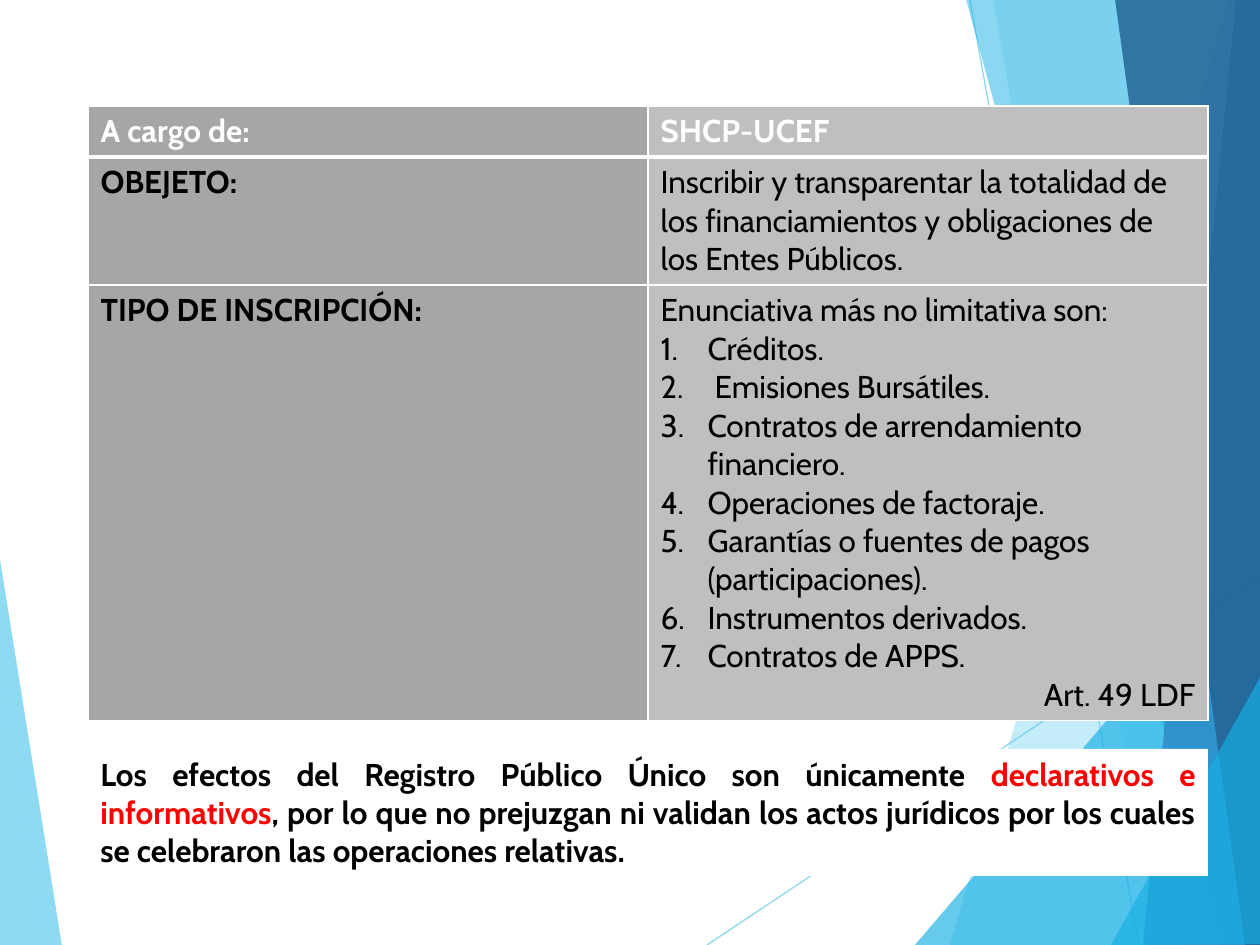
from dataclasses import dataclass

from pptx import Presentation
from pptx import util as u
from pptx.dml.color import RGBColor
from pptx.enum import shapes, text
from pptx.oxml import parse_xml
from pptx.oxml.ns import nsdecls, qn
from pptx.oxml.xmlchemy import OxmlElement

SCALE = u.Inches(1) / 126
WIDTH, HEIGHT = 1260, 945
BLANK_LAYOUT = 6


@dataclass(frozen=True)
class Theme:
    font: str = "Cabin"
    size: int = 18
    white: str = "FFFFFF"
    black: str = "000000"
    red: str = "FF0000"
    label_fill: str = "A6A6A6"
    value_fill: str = "BFBFBF"
    sky: str = "5FCBEF"
    cyan: str = "17B0E4"
    blue: str = "2E83C3"
    navy: str = "226292"


THEME = Theme()

# Facets of the background: colour, opacity in percent, corners in px
LEFT_FACET = (THEME.sky, 70, [(-1, 553), (62, 946), (-1, 945)])
RIGHT_FACETS = [
    (THEME.sky, 36, [(1229, 0), (950, 945), (1262, 946), (1261, 1)]),
    (THEME.sky, 20, [(993, -1), (1158, 945), (1261, 945), (1261, -1)]),
    (THEME.cyan, 66, [(915, 945), (1260, 541), (1261, 945)]),
    (THEME.cyan, 50, [(966, -1), (1222, 945), (1261, 944), (1261, -1)]),
    (THEME.blue, 70, [(1236, -1), (1143, 945), (1261, 945), (1260, -1)]),
    (THEME.navy, 82, [(1115, -1), (1245, 945), (1262, 945), (1260, -1)]),
    (THEME.cyan, 66, [(1111, 945), (1262, 674), (1262, 944)]),
]
RAYS = [((707, 945), (1261, 576)), ((970, 0), (1139, 945))]

REGISTRATION_TYPES = [
    "Créditos.",
    " Emisiones Bursátiles.",
    "Contratos de arrendamiento financiero.",
    "Operaciones de factoraje.",
    "Garantías o fuentes de pagos (participaciones).",
    "Instrumentos derivados.",
    "Contratos de APPS.",
]


def px(length):
    return u.Emu(round(length * SCALE))


def set_fill(fill, color, opacity=100):
    fill.solid()
    fill.fore_color.rgb = RGBColor.from_string(color)
    if opacity < 100:
        color_element = fill._xPr.find(qn("a:solidFill"))[0]
        alpha = OxmlElement("a:alpha")
        alpha.set("val", str(opacity * 1000))
        color_element.append(alpha)


def add_text(paragraph, content, color=THEME.black, bold=False, align=None, numbered=False):
    run = paragraph.add_run()
    run.text = content
    run.font.name = THEME.font
    run.font.size = u.Pt(THEME.size)
    run.font.bold = bold
    run.font.color.rgb = RGBColor.from_string(color)
    if align is not None:
        paragraph.alignment = align
    if numbered:
        properties = paragraph._p.get_or_add_pPr()
        properties.set("marL", str(px(47)))
        properties.set("indent", str(-px(47)))
        number = OxmlElement("a:buAutoNum")
        number.set("type", "arabicPeriod")
        properties.append(number)


def add_facet(slide, color, opacity, corners):
    builder = slide.shapes.build_freeform(*corners[0], scale=SCALE)
    builder.add_line_segments(corners[1:], close=True)
    shape = builder.convert_to_shape()
    shape.shadow.inherit = False
    set_fill(shape.fill, color, opacity)
    shape.line.fill.background()


def add_ray(slide, start, end):
    connector = slide.shapes.add_connector(
        shapes.MSO_CONNECTOR.STRAIGHT, *map(px, start + end))
    connector.line.width = u.Pt(0.75)
    set_fill(connector.line.fill, THEME.sky, 70)
    connector._element.spPr.append(OxmlElement("a:effectLst"))


def add_background(slide):
    add_facet(slide, *LEFT_FACET)
    for start, end in RAYS:
        add_ray(slide, start, end)
    for facet in RIGHT_FACETS:
        add_facet(slide, *facet)


def set_borders(cell, **points):
    properties = cell._tc.get_or_add_tcPr()
    for side in "LRTB":
        width = u.Pt(points.get(side, 1))
        properties.append(parse_xml(
            f'<a:ln{side} {nsdecls("a")} w="{width}"><a:solidFill>'
            f'<a:srgbClr val="{THEME.white}"/></a:solidFill></a:ln{side}>'))


def add_registry_table(slide):
    row_heights = [51, 127, 428]
    table = slide.shapes.add_table(
        3, 2, px(88), px(106), px(1120), px(sum(row_heights))).table
    for row, height in zip(table.rows, row_heights):
        row.height = px(height)

    # Cell borders and fills
    for index, row in enumerate(table.rows):
        for cell, color in zip(row.cells, (THEME.label_fill, THEME.value_fill)):
            set_borders(cell, T=3 if index == 1 else 1, B=3 if index == 0 else 1)
            set_fill(cell.fill, color)

    # Labels and opening lines
    rows = [
        ("A cargo de:", "SHCP-UCEF"),
        ("OBEJETO:", "Inscribir y transparentar la totalidad de los financiamientos "
                     "y obligaciones de los Entes Públicos."),
        ("TIPO DE INSCRIPCIÓN:", "Enunciativa más no limitativa son:"),
    ]
    for index, (label, value) in enumerate(rows):
        header = index == 0
        color = THEME.white if header else THEME.black
        for column, content in enumerate((label, value)):
            paragraph = table.cell(index, column).text_frame.paragraphs[0]
            add_text(paragraph, content, color=color, bold=header or column == 0)

    # Numbered list and its legal reference
    frame = table.cell(2, 1).text_frame
    for item in REGISTRATION_TYPES:
        add_text(frame.add_paragraph(), item, numbered=True)
    add_text(frame.add_paragraph(), "Art. 49 LDF", align=text.PP_ALIGN.RIGHT)


def add_effects_note(slide):
    shape = slide.shapes.add_shape(
        shapes.MSO_SHAPE.RECTANGLE, px(88), px(749), px(1120), px(127))
    shape.shadow.inherit = False
    set_fill(shape.fill, THEME.white)
    shape.line.fill.background()
    frame = shape.text_frame
    frame.word_wrap = True
    frame.auto_size = text.MSO_AUTO_SIZE.SHAPE_TO_FIT_TEXT
    frame.vertical_anchor = text.MSO_ANCHOR.TOP
    for content, color in [
        ("Los efectos del Registro Público Único son únicamente ", THEME.black),
        ("declarativos e informativos", THEME.red),
        (", por lo que no prejuzgan ni validan los actos jurídicos por los cuales "
         "se celebraron las operaciones relativas.", THEME.black),
    ]:
        add_text(frame.paragraphs[0], content, color=color, bold=True,
                 align=text.PP_ALIGN.JUSTIFY)


def main():
    presentation = Presentation()
    presentation.slide_width, presentation.slide_height = px(WIDTH), px(HEIGHT)
    slide = presentation.slides.add_slide(presentation.slide_layouts[BLANK_LAYOUT])
    set_fill(slide.background.fill, THEME.white)
    add_background(slide)
    add_registry_table(slide)
    add_effects_note(slide)
    presentation.save("out.pptx")


if __name__ == "__main__":
    main()
